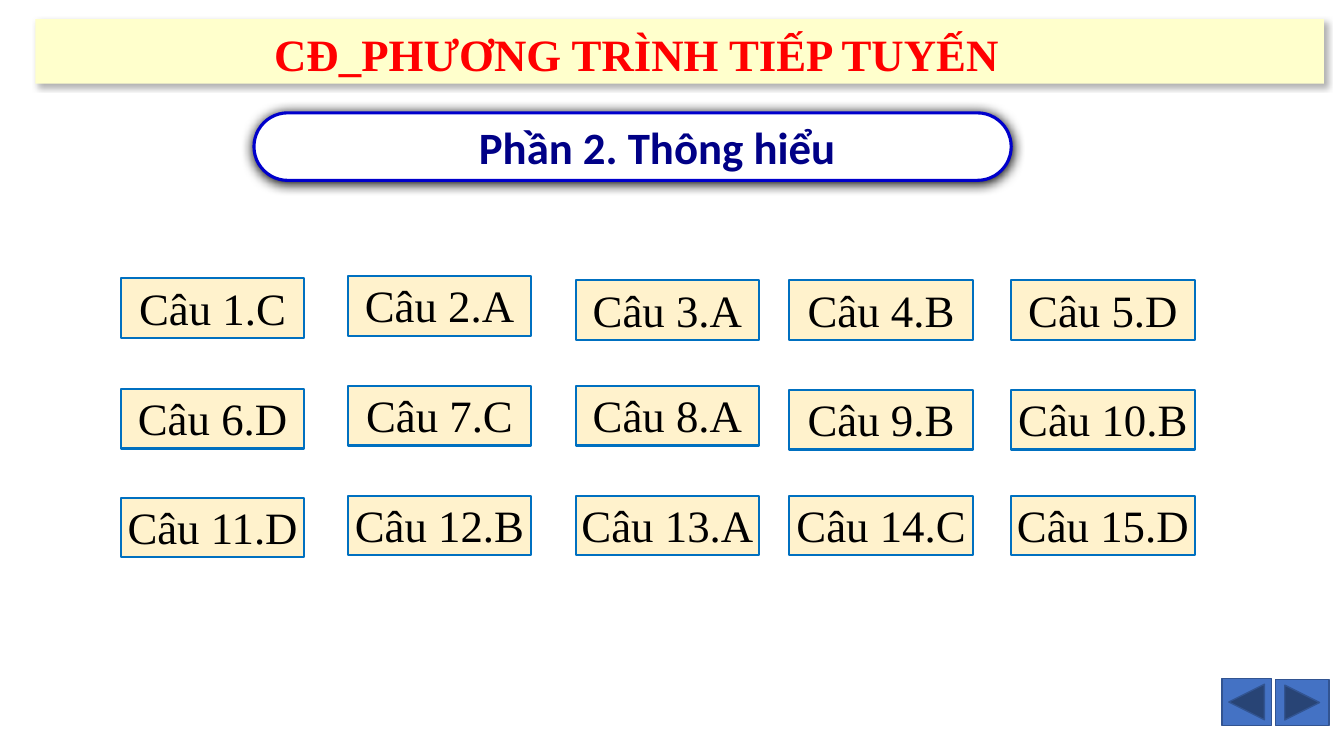
import pptx
import pptx.dml.color
import pptx.enum.shapes
import pptx.enum.text
import pptx.oxml
import pptx.oxml.ns
import pptx.util

MSO = pptx.enum.shapes.MSO_SHAPE
WIDTH, HEIGHT = pptx.util.Inches(13.33), pptx.util.Inches(7.5)
SERIF = "Times New Roman"
ANSWERS = "CAABDDCABBDBACD"
COLUMNS = [9, 25.88, 42.84, 58.74, 75.24]
FIRST_ROW, ROW_PITCH = 36.53, 14.53
ROW_SHIFTS = [
    [0.27, 0, 0.54, 0.54, 0.54],
    [0.4, 0, 0, 0.53, 0.53],
    [0.27, 0, 0, 0, 0],
]


def rgb(value):
    return pptx.dml.color.RGBColor.from_string(value)


def place(left, top, width, height):
    return [round(share * side / 100) for share, side in
            zip((left, top, width, height), (WIDTH, HEIGHT, WIDTH, HEIGHT))]


def add_block(s, kind, box, fill, line=None, weight=1):
    sp = s.shapes.add_shape(kind, *place(*box))
    sp.shadow.inherit = False
    sp.fill.solid()
    sp.fill.fore_color.rgb = rgb(fill)
    if line:
        sp.line.color.rgb = rgb(line)
        sp.line.width = pptx.util.Pt(weight)
    else:
        sp.line.fill.background()
    return sp


def add_shadow(sp, alpha, blur, distance, angle):
    effects = sp._element.spPr.find(pptx.oxml.ns.qn("a:effectLst"))
    effects.append(pptx.oxml.parse_xml(
        f'<a:outerShdw {pptx.oxml.ns.nsdecls("a")} blurRad="{pptx.util.Pt(blur)}" '
        f'dist="{pptx.util.Pt(distance)}" dir="{angle * 60000}" algn="ctr" '
        f'rotWithShape="0"><a:srgbClr val="000000">'
        f'<a:alpha val="{alpha * 1000}"/></a:srgbClr></a:outerShdw>'))


def write(sp, text, font=SERIF, color="000000", bold=False, anchor="TOP",
          wrap=True, left=0.05):
    tf = sp.text_frame
    tf.word_wrap = wrap
    tf.vertical_anchor = pptx.enum.text.MSO_ANCHOR[anchor]
    tf.margin_left = pptx.util.Inches(left)
    tf.margin_right = pptx.util.Inches(0.05)
    tf.margin_top = tf.margin_bottom = pptx.util.Inches(0.02)
    p = tf.paragraphs[0]
    p.alignment = pptx.enum.text.PP_ALIGN.CENTER
    r = p.add_run()
    r.text = text
    r.font.name = font
    r.font.size = pptx.util.Pt(32)
    r.font.bold = bold
    r.font.color.rgb = rgb(color)


def add_section(s):
    sp = add_block(s, MSO.ROUNDED_RECTANGLE, (18.9, 14.93, 56.34, 8.93),
                   "FFFFFF", "0000CC", 2.25)
    sp.adjustments[0] = 0.5
    add_shadow(sp, 100, 8.5, 1, 90)
    write(sp, "Phần 2. Thông hiểu", font="Calibri", color="000086",
          bold=True, anchor="MIDDLE", left=0.54)


def add_answers(s):
    for i, answer in enumerate(ANSWERS):
        row, col = divmod(i, len(COLUMNS))
        top = FIRST_ROW + row * ROW_PITCH + ROW_SHIFTS[row][col]
        sp = add_block(s, MSO.RECTANGLE, (COLUMNS[col], top, 13.65, 7.87),
                       "FFF2CC", "0070C0", 1.5)
        write(sp, f"Câu {i + 1}.{answer}", wrap=False)


def add_navigation(s):
    for kind, box in (
        (MSO.ACTION_BUTTON_BACK_OR_PREVIOUS, (90.92, 89.73, 3.68, 6.27)),
        (MSO.ACTION_BUTTON_FORWARD_OR_NEXT, (94.9, 89.87, 3.98, 6.13)),
    ):
        add_block(s, kind, box, "4472C4", "325491")


def add_title(s):
    band = add_block(s, MSO.RECTANGLE, (2.63, 2.53, 95.87, 8.53), "FFFFCC")
    add_shadow(band, 30, 4.5, 2.6, 53)
    title = s.shapes.add_textbox(*place(2.48, 3.33, 90.62, 7.87))
    write(title, "CĐ_PHƯƠNG TRÌNH TIẾP TUYẾN ", color="FF0000", bold=True)


def main():
    prs = pptx.Presentation()
    prs.slide_width, prs.slide_height = WIDTH, HEIGHT
    s = prs.slides.add_slide(prs.slide_layouts[6])
    add_section(s)
    add_answers(s)
    add_navigation(s)
    add_title(s)
    prs.save("out.pptx")


if __name__ == "__main__":
    main()
